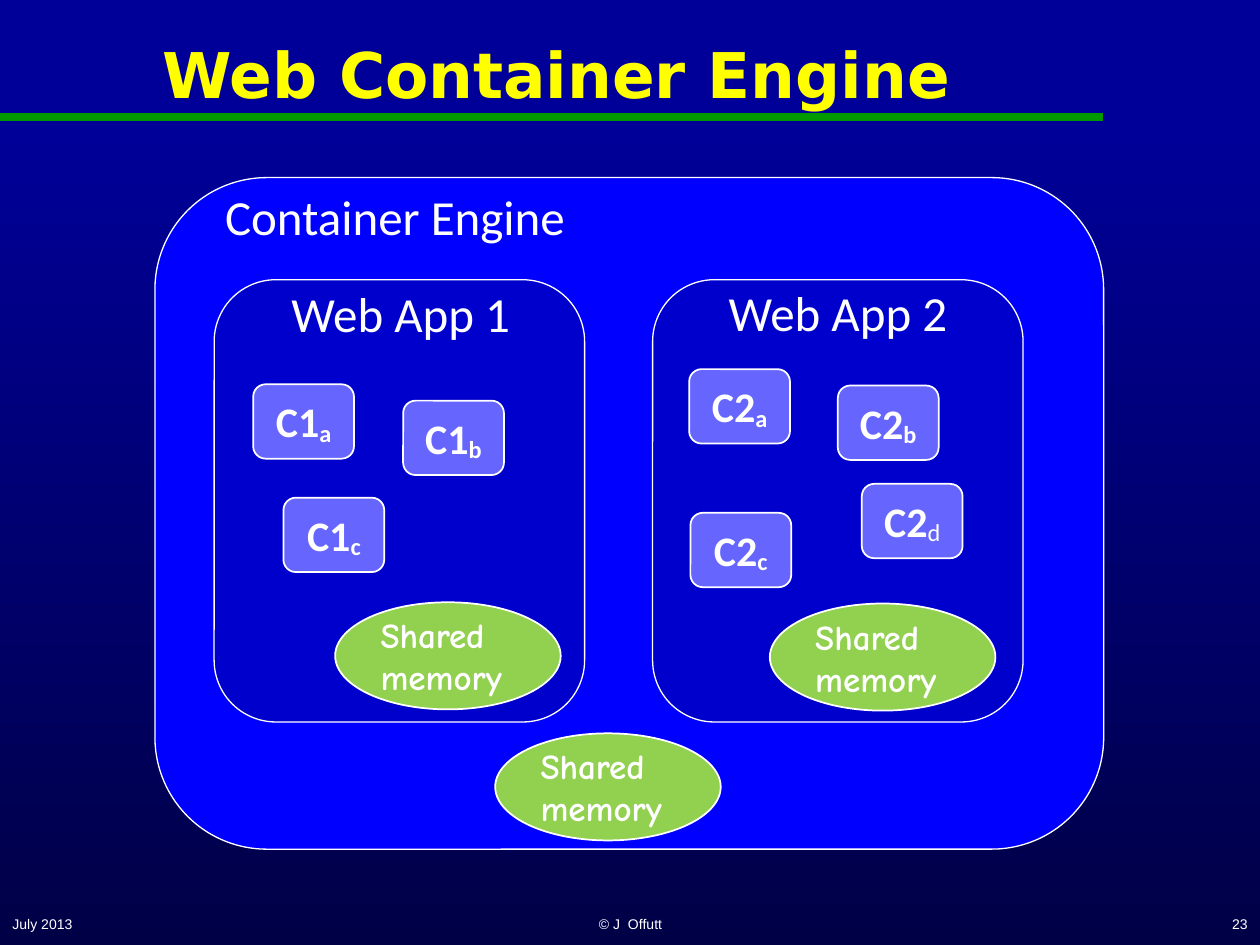
from lxml import etree
from pptx import Presentation
from pptx.dml.color import RGBColor
from pptx.enum import shapes, text
from pptx.oxml.ns import qn
from pptx.util import Inches, Pt

WHITE = "FFFFFF"
ALIGN = text.PP_ALIGN


def paint(color_format, hex_color):
    color_format.rgb = RGBColor.from_string(hex_color)


def put(shape, kind, fill, line_width, box):
    """Add a filled, white-outlined shape and return it."""
    sp = shape.add_shape(kind, *[Inches(v) for v in box])
    sp.shadow.inherit = False
    sp.fill.solid()
    paint(sp.fill.fore_color, fill)
    paint(sp.line.color, WHITE)
    sp.line.width = Pt(line_width)
    sp.text_frame.word_wrap = True
    sp.text_frame.vertical_anchor = text.MSO_ANCHOR.MIDDLE
    sp.text_frame.paragraphs[0].alignment = ALIGN.CENTER
    return sp


prs = Presentation()
prs.slide_width, prs.slide_height = Inches(10), Inches(7.5)
s = prs.slides.add_slide(prs.slide_layouts[5])

# Background
bg = s.background.fill
bg.gradient()
bg.gradient_angle = 270
for stop, (position, color) in zip(bg.gradient_stops, [(0.13, "000099"), (1, "000047")]):
    stop.position = position
    paint(stop.color, color)

# Title and rule
title = s.shapes.title
title.left, title.top, title.width, title.height = [Inches(v) for v in (0.08, 0.08, 8.67, 1)]
title.text_frame.text = "Web Container Engine"
title.text_frame.vertical_anchor = text.MSO_ANCHOR.MIDDLE
p = title.text_frame.paragraphs[0]
p.alignment = ALIGN.CENTER
font = p.runs[0].font
font.name, font.size, font.bold = "DejaVu Sans", Pt(36), True
paint(font.color, "FFFF00")

rule = s.shapes.add_connector(shapes.MSO_CONNECTOR.STRAIGHT, 0, Inches(0.93), Inches(8.75), Inches(0.93))
paint(rule.line.color, "009900")
rule.line.width = Pt(4.5)
etree.SubElement(rule._element.spPr, qn("a:effectLst"))

# Engine and web app panels
ROUND = shapes.MSO_SHAPE.ROUNDED_RECTANGLE
for fill, box in [
    ("0000FF", (1.23, 1.41, 7.53, 5.33)),
    ("0000CC", (1.7, 2.22, 2.94, 3.51)),
    ("0000CC", (5.18, 2.22, 2.94, 3.51)),
]:
    put(s.shapes, ROUND, fill, 0.75, box)

# Panel headings and footer
MIDDLE, TOP = text.MSO_ANCHOR.MIDDLE, text.MSO_ANCHOR.TOP
for label, box, align, anchor, name, size in [
    ("Container Engine", (1.45, 1.43, 3.37, 0.57), ALIGN.CENTER, TOP, "Calibri", 28),
    ("Web App 1", (2.11, 2.2, 2.14, 0.57), ALIGN.CENTER, TOP, "Calibri", 28),
    ("Web App 2", (5.58, 2.19, 2.14, 0.57), ALIGN.CENTER, TOP, "Calibri", 28),
    ("July 2013", (0, 7.17, 2.08, 0.33), ALIGN.LEFT, MIDDLE, "Arial", 8),
    ("© J  Offutt", (3.42, 7.17, 3.17, 0.33), ALIGN.CENTER, MIDDLE, "Arial", 8),
    ("23", (7.92, 7.17, 2.08, 0.33), ALIGN.RIGHT, MIDDLE, "Arial", 8),
]:
    tf = s.shapes.add_textbox(*[Inches(v) for v in box]).text_frame
    tf.word_wrap = True
    tf.vertical_anchor = anchor
    tf.text = label
    p = tf.paragraphs[0]
    p.alignment = align
    font = p.runs[0].font
    font.name, font.size = name, Pt(size)
    paint(font.color, WHITE)

# Components, each with a subscript letter
for app, letter, left, top in [
    ("C1", "a", 2.01, 3.05), ("C1", "b", 3.2, 3.18), ("C1", "c", 2.25, 3.95),
    ("C2", "a", 5.47, 2.93), ("C2", "b", 6.65, 3.06), ("C2", "c", 5.48, 4.07),
    ("C2", "d", 6.84, 3.84),
]:
    sp = put(s.shapes, ROUND, "6666FF", 1, (left, top, 0.8, 0.59))
    p = sp.text_frame.paragraphs[0]
    for part in (app, letter):
        r = p.add_run()
        r.text = part
        r.font.name, r.font.size, r.font.bold = "Calibri", Pt(24), part != "d"
        paint(r.font.color, WHITE)
    r._r.get_or_add_rPr().set("baseline", "-10000")

# Shared memory of each app and of the engine
for left, top in [(2.66, 4.78), (6.11, 4.79), (3.93, 5.82)]:
    sp = put(s.shapes, shapes.MSO_SHAPE.OVAL, "92D050", 1, (left, top, 1.79, 0.85))
    sp.text_frame.text = "Shared memory"
    font = sp.text_frame.paragraphs[0].runs[0].font
    font.name, font.size, font.bold = "Comic Neue", Pt(20), True
    paint(font.color, WHITE)

prs.save("out.pptx")
